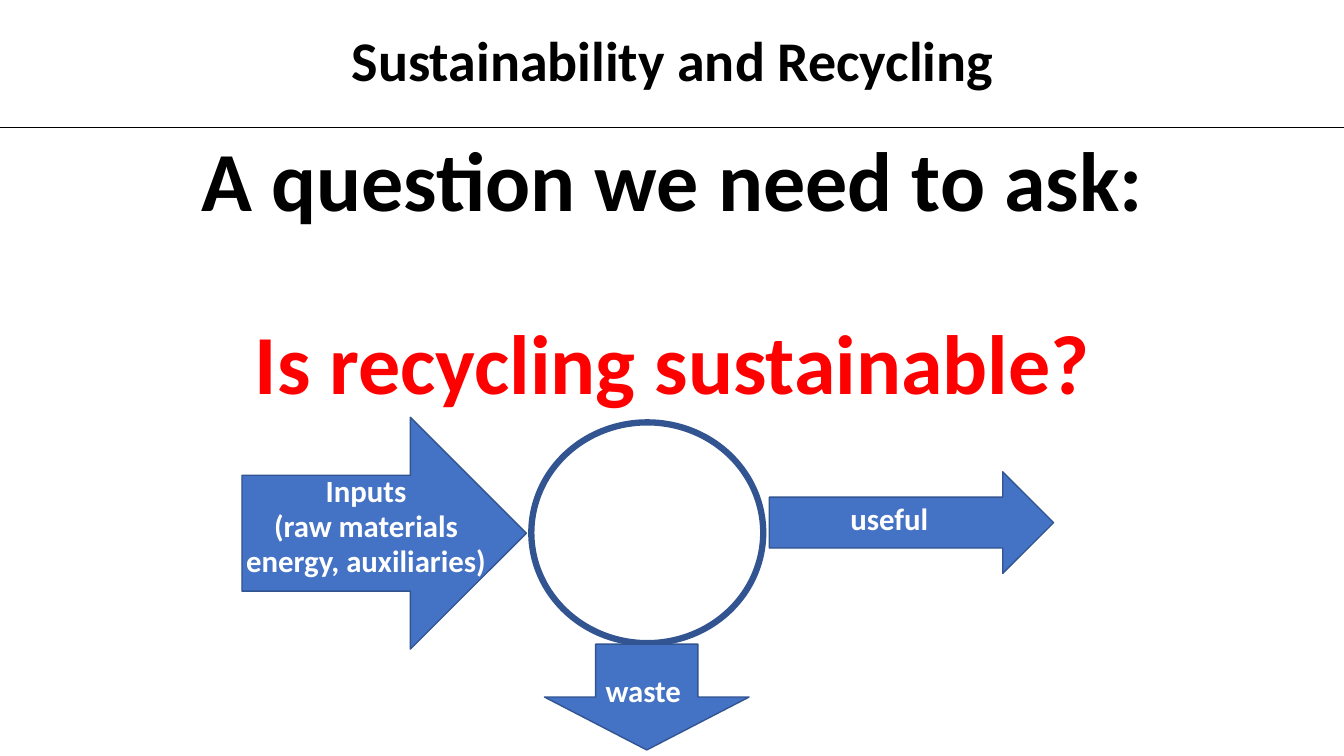
from dataclasses import dataclass

from lxml.etree import SubElement
from pptx import Presentation
from pptx.dml.color import RGBColor
from pptx.enum.shapes import MSO_CONNECTOR, MSO_SHAPE
from pptx.enum.text import MSO_ANCHOR, PP_ALIGN
from pptx.oxml.ns import qn
from pptx.util import Inches, Pt


@dataclass(frozen=True)
class Theme:
    font: str = "Calibri"
    ink: str = "000000"
    accent: str = "FF0000"
    arrow: str = "4472C4"
    outline: str = "325491"
    label: str = "FFFFFF"
    heading_size: int = 40
    question_size: int = 60
    label_size: int = 22


def write_text(frame, text, *, font, size, colors, spacing=0.9, gap=1):
    for index, line in enumerate(text.split("\n")):
        paragraph = frame.paragraphs[0] if index == 0 else frame.add_paragraph()
        paragraph.alignment = PP_ALIGN.CENTER
        paragraph.line_spacing = spacing
        paragraph.space_before = Pt(gap if index else 1)
        run = paragraph.add_run()
        run.text = line
        run.font.name = font
        run.font.size = Pt(size)
        run.font.bold = True
        run.font.color.rgb = RGBColor.from_string(colors[min(index, len(colors) - 1)])


class SlideBuilder:
    def __init__(self, slide, theme):
        self.slide = slide
        self.theme = theme

    def text(self, text, box, size, *colors, wrap=True, **style):
        frame = self.slide.shapes.add_textbox(*map(Inches, box)).text_frame
        frame.word_wrap = wrap
        frame.vertical_anchor = MSO_ANCHOR.MIDDLE
        frame.margin_left = frame.margin_right = frame.margin_bottom = 0
        frame.margin_top = Inches(0.01)
        write_text(frame, text, font=self.theme.font, size=size, colors=colors, **style)

    def shape(self, kind, box, weight=1, fill=None):
        shape = self.slide.shapes.add_shape(kind, *map(Inches, box))
        shape.shadow.inherit = False
        if fill:
            shape.fill.solid()
            shape.fill.fore_color.rgb = RGBColor.from_string(fill)
        else:
            shape.fill.background()
        shape.line.color.rgb = RGBColor.from_string(self.theme.outline)
        shape.line.width = Pt(weight)

    def rule(self, top, width):
        rule = self.slide.shapes.add_connector(
            MSO_CONNECTOR.STRAIGHT, 0, Inches(top), Inches(width), Inches(top)
        )
        rule.line.color.rgb = RGBColor.from_string(self.theme.ink)
        rule.line.width = Pt(0.5)
        SubElement(rule.element.spPr, qn("a:effectLst"))


def main():
    presentation = Presentation()
    presentation.slide_width = Inches(13.33)
    presentation.slide_height = Inches(7.5)
    theme = Theme()
    builder = SlideBuilder(
        presentation.slides.add_slide(presentation.slide_layouts[6]), theme
    )

    builder.text(
        "A question we need to ask:\nIs recycling sustainable?",
        (1.82, 1.36, 9.7, 2.74),
        theme.question_size,
        theme.ink,
        theme.accent,
        gap=66,
    )
    builder.text(
        "Sustainability and Recycling",
        (3.34, 0.2, 6.66, 0.77),
        theme.heading_size,
        theme.ink,
        wrap=False,
        spacing=1.0,
    )
    builder.rule(1.26, 13.33)
    builder.shape(MSO_SHAPE.FLOWCHART_CONNECTOR, (5.27, 4.19, 2.3, 2.19), weight=4.5)

    flows = [
        (MSO_SHAPE.RIGHT_ARROW, (2.4, 4.14, 2.82, 2.3),
         "Inputs\n(raw materials\nenergy, auxiliaries)", (2.22, 4.71, 2.82, 1.04)),
        (MSO_SHAPE.RIGHT_ARROW, (7.63, 4.68, 2.82, 1.01),
         "useful", (7.41, 4.98, 2.82, 0.35)),
        (MSO_SHAPE.DOWN_ARROW, (5.4, 6.39, 2.03, 1.05),
         "waste", (4.97, 6.69, 2.82, 0.35)),
    ]
    for arrow, arrow_box, label, label_box in flows:
        builder.shape(arrow, arrow_box, fill=theme.arrow)
        builder.text(label, label_box, theme.label_size, theme.label)

    presentation.save("out.pptx")


if __name__ == "__main__":
    main()
